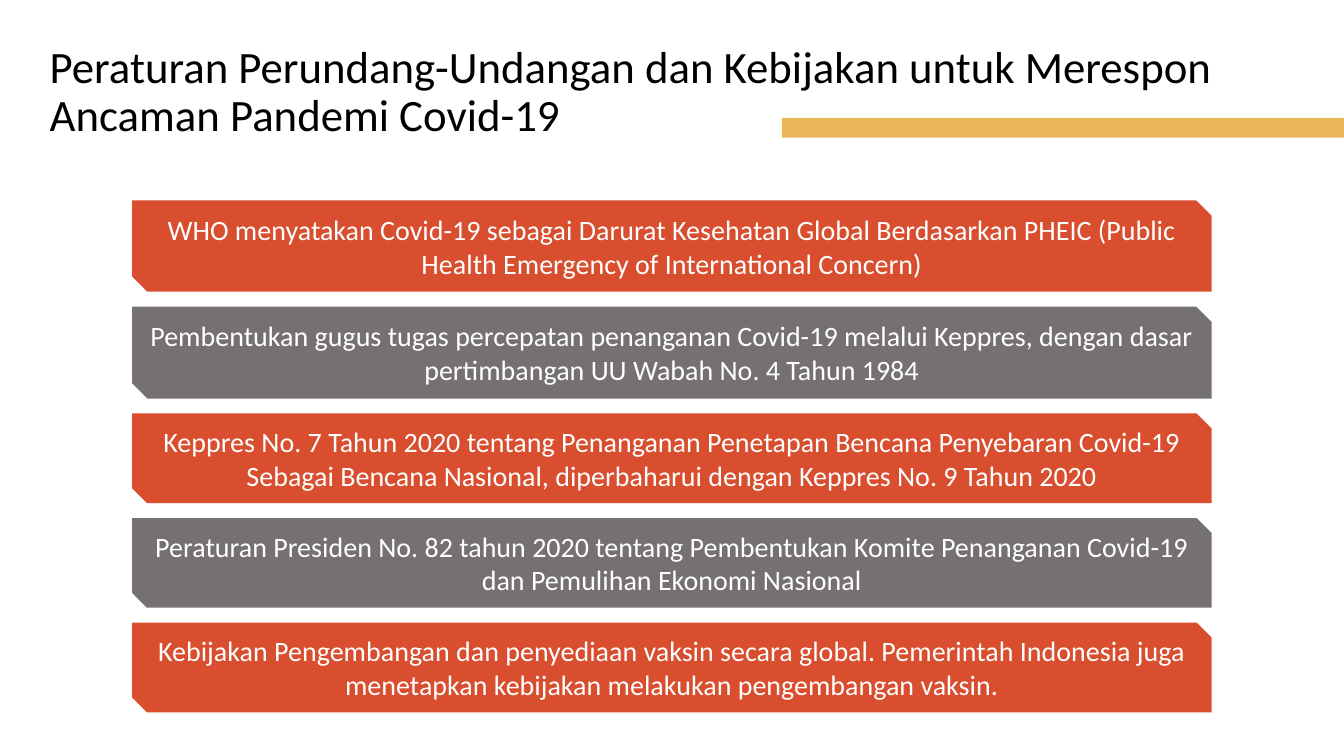
from pptx import Presentation
from pptx.dml.color import RGBColor
from pptx.enum.shapes import MSO_SHAPE as SHAPE
from pptx.enum.text import MSO_ANCHOR as ANCHOR, PP_ALIGN as ALIGN
from pptx.util import Pt

FONT = "Calibri"
COLORS = {
    "title": "000000",
    "accent": "EBB55A",
    "red": "D84E2E",
    "gray": "767171",
    "white": "FFFFFF",
}

TITLE = ("Peraturan Perundang-Undangan dan Kebijakan untuk Merespon "
         "Ancaman Pandemi Covid-19")

# Height and wording of each policy box
POLICIES = [
    (65.2, "WHO menyatakan Covid-19 sebagai Darurat Kesehatan Global Berdasarkan "
           "PHEIC (Public Health Emergency of International Concern)"),
    (65.7, "Pembentukan gugus tugas percepatan penanganan Covid-19 melalui Keppres, "
           "dengan dasar pertimbangan UU Wabah No. 4 Tahun 1984"),
    (64.1, "Keppres No. 7 Tahun 2020 tentang Penanganan Penetapan Bencana Penyebaran "
           "Covid-19 Sebagai Bencana Nasional, diperbaharui dengan Keppres No. 9 "
           "Tahun 2020"),
    (64.1, "Peraturan Presiden No. 82 tahun 2020 tentang Pembentukan Komite "
           "Penanganan Covid-19 dan Pemulihan Ekonomi Nasional"),
    (64.1, "Kebijakan Pengembangan dan penyediaan vaksin secara global. Pemerintah "
           "Indonesia juga menetapkan kebijakan melakukan pengembangan vaksin."),
]
BOX_LEFT, BOX_TOP, BOX_WIDTH, BOX_GAP = 94.3, 143.2, 771.1, 10.6


def rgb(name):
    return RGBColor.from_string(COLORS[name])


def write(sp, text, size, color, align):
    tf = sp.text_frame
    tf.word_wrap = True
    tf.vertical_anchor = ANCHOR.MIDDLE
    p = tf.paragraphs[0]
    p.alignment = align
    r = p.add_run()
    r.text = text
    r.font.name = FONT
    r.font.size = Pt(size)
    r.font.color.rgb = rgb(color)
    return p


def add_title(s, text, left, top, width, height):
    sp = s.shapes.add_textbox(Pt(left), Pt(top), Pt(width), Pt(height))
    p = write(sp, text, 32, "title", ALIGN.LEFT)
    p.line_spacing = 0.9


def add_block(s, kind, color, left, top, width, height):
    sp = s.shapes.add_shape(kind, Pt(left), Pt(top), Pt(width), Pt(height))
    sp.shadow.inherit = False
    sp.fill.solid()
    sp.fill.fore_color.rgb = rgb(color)
    sp.line.fill.background()
    return sp


def add_policies(s):
    top = BOX_TOP
    for i, (height, text) in enumerate(POLICIES):
        color = ("red", "gray")[i % 2]
        sp = add_block(s, SHAPE.SNIP_2_DIAG_RECTANGLE, color,
                       BOX_LEFT, top, BOX_WIDTH, height)
        write(sp, text, 20, "white", ALIGN.CENTER)
        top += height + BOX_GAP


def main():
    prs = Presentation()
    prs.slide_width, prs.slide_height = Pt(960), Pt(540)
    s = prs.slides.add_slide(prs.slide_layouts[6])

    # Heading and accent bar
    add_title(s, TITLE, 28.4, 14.4, 865.4, 104.4)
    add_block(s, SHAPE.RECTANGLE, "accent", 558.5, 84.2, 401.5, 14.1)

    # Stack of policy boxes
    add_policies(s)

    prs.save("out.pptx")


if __name__ == "__main__":
    main()
